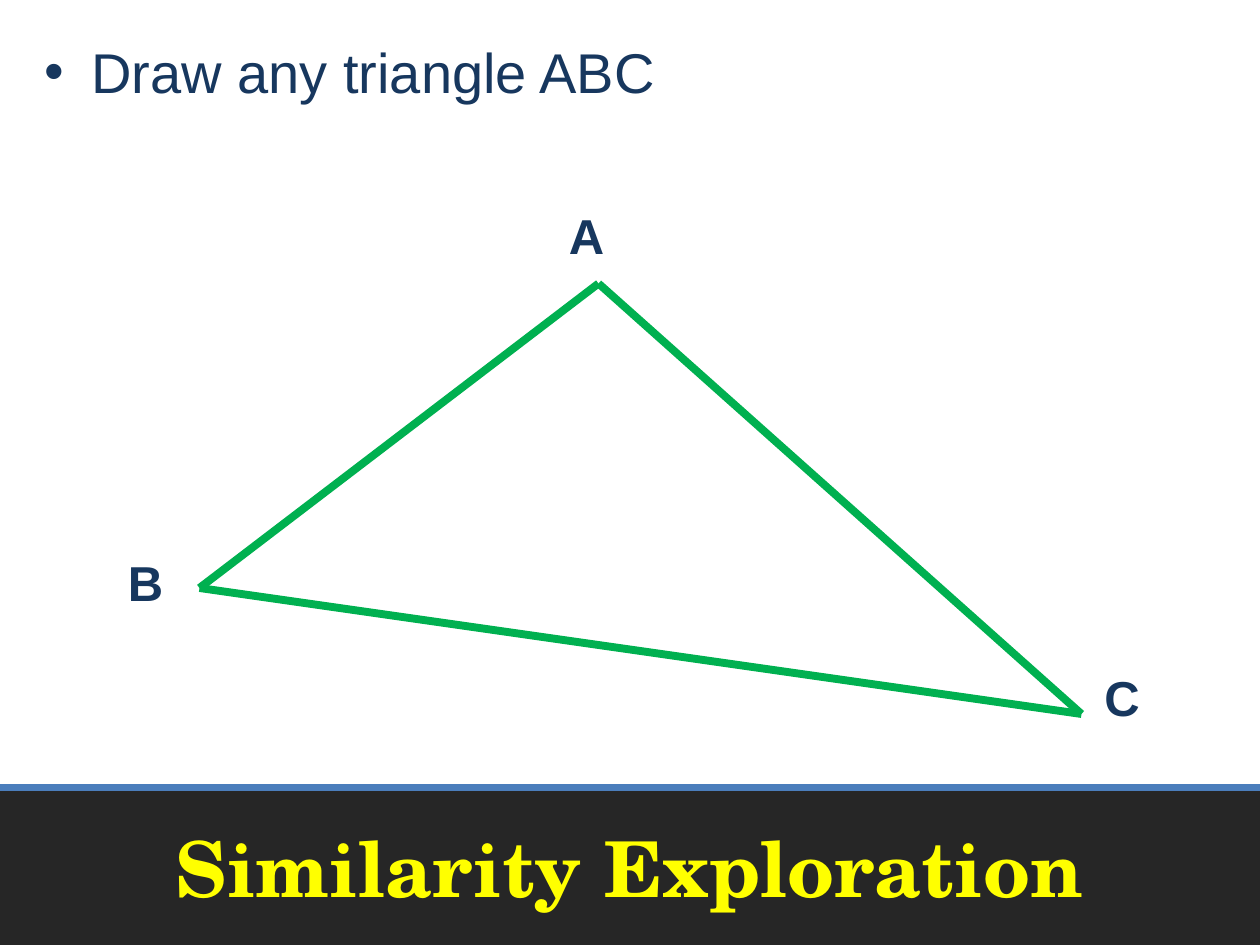
from itertools import combinations

from pptx import Presentation
from pptx import util as u
from pptx.dml.color import RGBColor
from pptx.enum import shapes, text
from pptx.oxml.ns import qn
from lxml import etree

# Content
TITLE = "Similarity Exploration"
STEPS = ["Draw any triangle ABC"]
VERTICES = {"A": (456, 216), "B": (152, 448), "C": (824, 544)}
LABELS = {"A": (424, 152), "C": (832, 504), "B": (88, 416)}

# Format
COLORS = {"band": "262626", "rule": "4B7EBC", "title": "FFFF00",
          "ink": "17375E", "side": "00B050"}
TITLE_FONT = {"name": "TeX Gyre Schola", "size": u.Pt(44), "bold": True}
STEP_FONT = {"name": "Arial", "size": u.Pt(32)}
LABEL_FONT = {"name": "Arial", "size": u.Pt(28), "bold": True}

# Layout, in px at 96 to the inch
WIDTH, HEIGHT, MARGIN = 960, 720, 24
BAND_TOP, BODY_HEIGHT = 600, 568
LABEL_SIZE = (47, 55)


def px(*lengths):
    return [u.Emu(length * 9525) for length in lengths]


def rgb(name):
    return RGBColor.from_string(COLORS[name])


def style(font, values, color):
    for key, value in values.items():
        setattr(font, key, value)
    font.color.rgb = rgb(color)


def place(placeholder, *box):
    for key, value in zip(("left", "top", "width", "height"), px(*box)):
        setattr(placeholder, key, value)


def add_line(start, end, color, weight):
    line = slide.shapes.add_connector(
        shapes.MSO_CONNECTOR.STRAIGHT, *px(*start, *end))
    line.line.color.rgb = rgb(color)
    line.line.width = u.Pt(weight)
    etree.SubElement(line._element.spPr, qn("a:effectLst"))
    return line


prs = Presentation()
prs.slide_width, prs.slide_height = px(WIDTH, HEIGHT)
slide = prs.slides.add_slide(prs.slide_layouts[1])

# Title band with its rule, sent behind the placeholders
band = slide.shapes.add_shape(
    shapes.MSO_SHAPE.RECTANGLE, *px(0, BAND_TOP, WIDTH, HEIGHT - BAND_TOP))
band.shadow.inherit = False
band.fill.solid()
band.fill.fore_color.rgb = rgb("band")
band.line.fill.background()
rule = add_line((0, BAND_TOP), (WIDTH, BAND_TOP), "rule", 4)
for position, part in enumerate((band, rule), start=2):
    slide.shapes._spTree.insert(position, part._element)

# Title
title = slide.shapes.title
place(title, MARGIN, BAND_TOP, WIDTH - 2 * MARGIN, HEIGHT - BAND_TOP)
title.text_frame.text = TITLE
title.text_frame.vertical_anchor = text.MSO_ANCHOR.MIDDLE
heading = title.text_frame.paragraphs[0]
heading.alignment = text.PP_ALIGN.CENTER
style(heading.runs[0].font, TITLE_FONT, "title")

# Steps
body = slide.placeholders[1]
place(body, MARGIN, MARGIN, WIDTH - 2 * MARGIN, BODY_HEIGHT)
body.text_frame.text = "\n".join(STEPS)
for step in body.text_frame.paragraphs:
    style(step.runs[0].font, STEP_FONT, "ink")

# Triangle sides
for start, end in combinations(VERTICES.values(), 2):
    add_line(start, end, "side", 4.5)

# Vertex labels
for letter, corner in LABELS.items():
    label = slide.shapes.add_textbox(*px(*corner, *LABEL_SIZE))
    label.text_frame.word_wrap = False
    label.text_frame.auto_size = text.MSO_AUTO_SIZE.SHAPE_TO_FIT_TEXT
    label.text_frame.text = letter
    style(label.text_frame.paragraphs[0].runs[0].font, LABEL_FONT, "ink")

prs.save("out.pptx")
